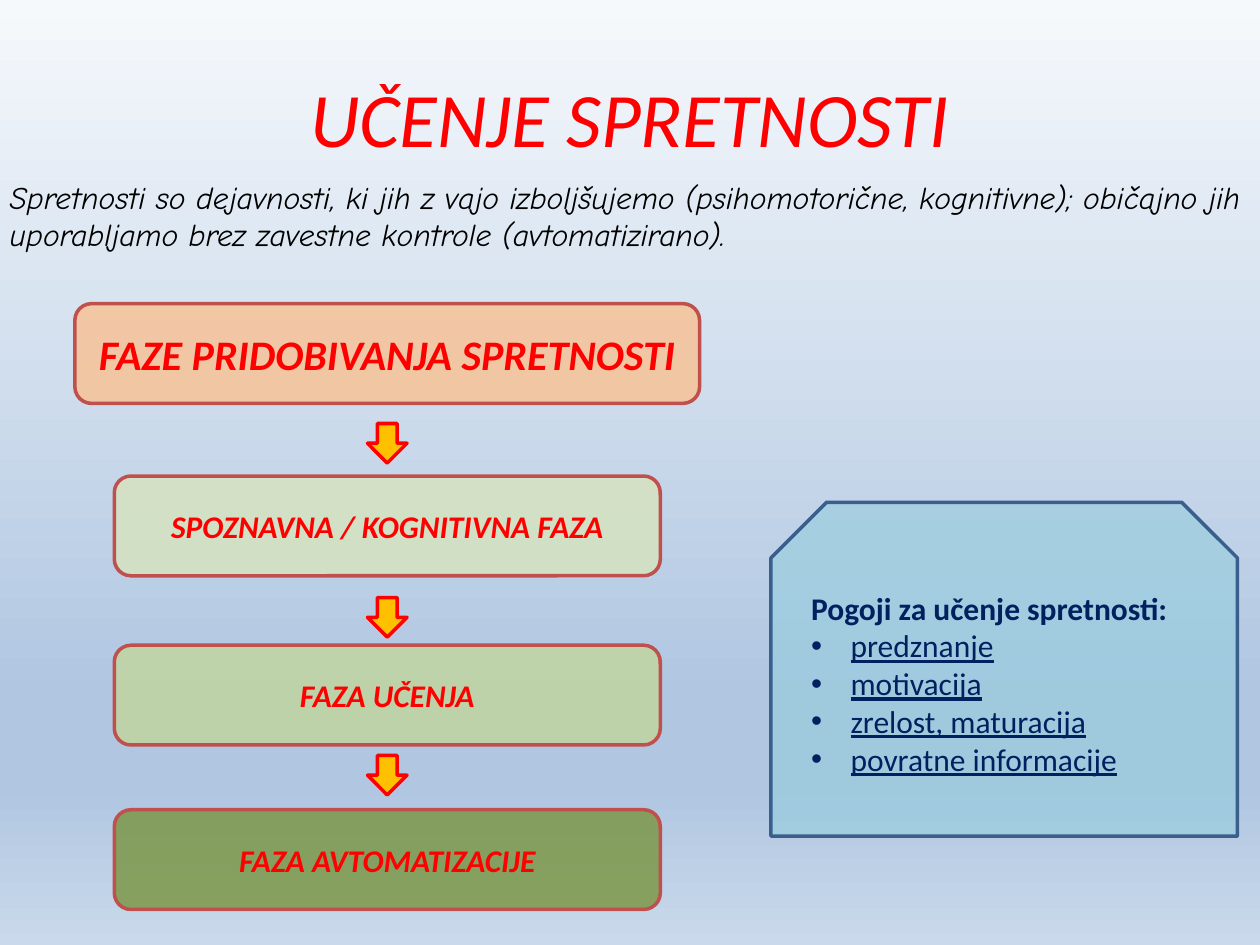
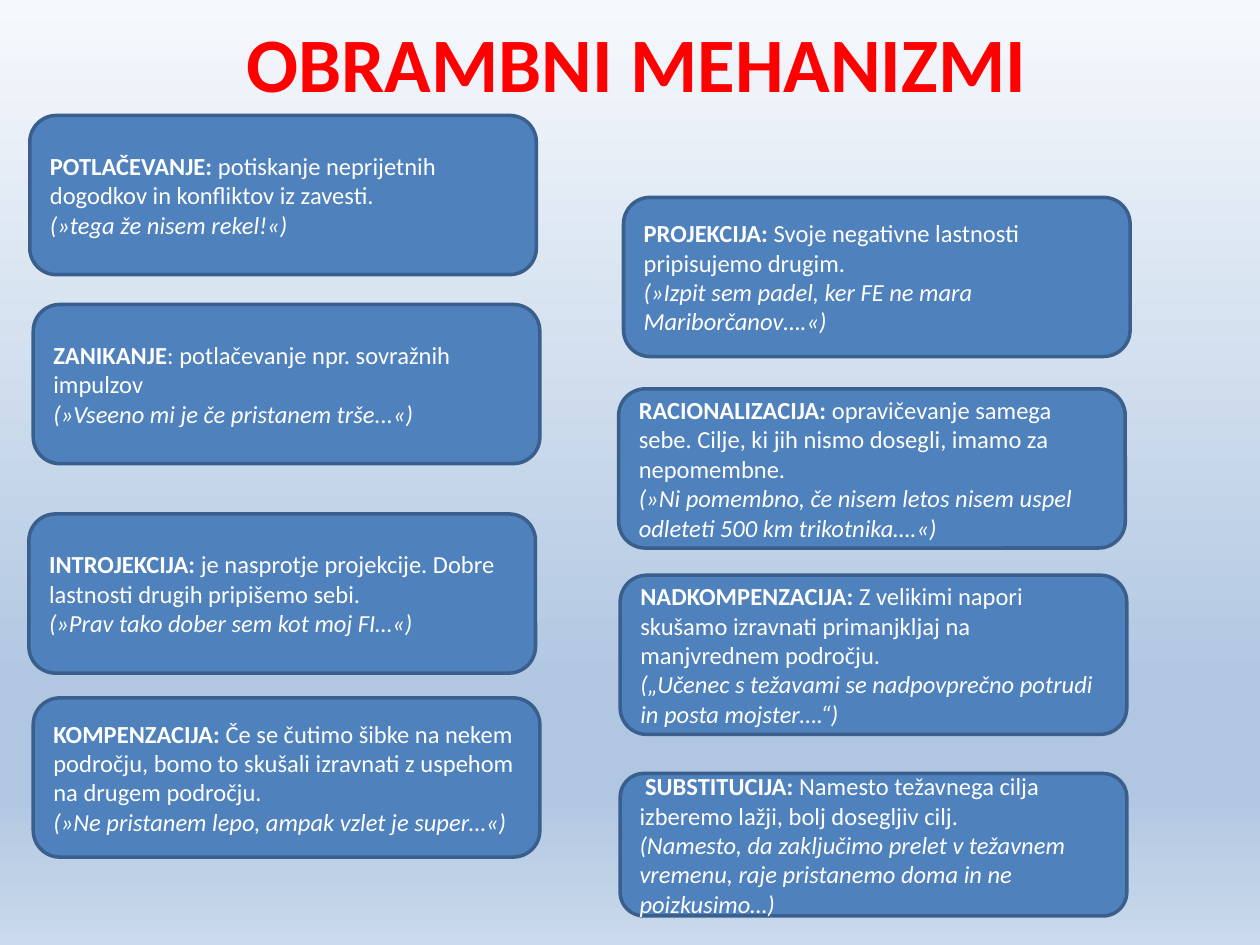
from lxml import etree
from pptx import Presentation
from pptx.dml.color import RGBColor
from pptx.enum import shapes, text
from pptx.oxml import ns
from pptx.util import Pt

COLORS = {
    "red": "FF0000", "black": "000000", "white": "FFFFFF", "navy": "002060",
    "sky": "93CDDD", "blue": "4F81BD", "blue edge": "3A5F8C",
    "brick": "C0504D", "peach": "FAC090", "amber": "FFC000",
    "pale green": "D7E4BD", "light green": "C3D69B", "dark green": "77933C",
}
BACKGROUND_STOPS = [(0, "F6F9FC"), (74, "B0C6E1"), (83, "B0C6E1"), (100, "CAD9EB")]
LEFT, CENTER = text.PP_ALIGN.LEFT, text.PP_ALIGN.CENTER


def add_box(slide, kind, box, fill, edge, opacity=100):
    """Add a filled, outlined shape; box is left, top, width, height in points."""
    shape = slide.shapes.add_shape(kind, *[Pt(length) for length in box])
    shape.shadow.inherit = False
    shape.fill.solid()
    shape.fill.fore_color.rgb = RGBColor.from_string(COLORS[fill])
    if opacity < 100:
        color = shape.element.spPr.find(ns.qn("a:solidFill"))[0]
        etree.SubElement(color, ns.qn("a:alpha"), val=str(opacity * 1000))
    shape.line.color.rgb = RGBColor.from_string(COLORS[edge])
    shape.line.width = Pt(2)
    shape.text_frame.word_wrap = True
    shape.text_frame.vertical_anchor = text.MSO_ANCHOR.MIDDLE
    return shape


def format_paragraph(paragraph, size, color, alignment=LEFT, name="Calibri", bold=None, italic=None):
    paragraph.alignment = alignment
    font = paragraph.font
    font.name, font.size, font.bold, font.italic = name, Pt(size), bold, italic
    font.color.rgb = RGBColor.from_string(COLORS[color])


presentation = Presentation()
presentation.slide_width, presentation.slide_height = Pt(720), Pt(540)

# Shared background
master = presentation.slide_master
background_fill = master.background.fill
background_fill.gradient()
background_fill.gradient_angle = 270
stop_list = master.element.xpath("./p:cSld/p:bg//a:gsLst")[0]
for old_stop in list(stop_list):
    stop_list.remove(old_stop)
for position, color in BACKGROUND_STOPS:
    stop = etree.SubElement(stop_list, ns.qn("a:gs"), pos=str(position * 1000))
    etree.SubElement(stop, ns.qn("a:srgbClr"), val=color)

# Both slides with their titles
slides = []
for wording, box, bold, italic in [
    ("UČENJE SPRETNOSTI", (36, 21.6, 648, 90), False, True),
    ("OBRAMBNI MEHANIZMI", (40, 0, 648, 71), True, False),
]:
    slide = presentation.slides.add_slide(presentation.slide_layouts[5])
    title = slide.shapes.title
    title.left, title.top, title.width, title.height = [Pt(length) for length in box]
    title.text_frame.text = wording
    title.text_frame.vertical_anchor = text.MSO_ANCHOR.MIDDLE
    format_paragraph(title.text_frame.paragraphs[0], 44, "red", CENTER, bold=bold, italic=italic)
    slides.append(slide)
skills_slide, defences_slide = slides

# Slide 1: definition, phases and conditions
definition = skills_slide.shapes.add_textbox(Pt(-1.5), Pt(98), Pt(720), Pt(73)).text_frame
definition.word_wrap = True
definition.text = (
    "Spretnosti so dejavnosti, ki jih z vajo izboljšujemo (psihomotorične, kognitivne); "
    "običajno jih uporabljamo brez zavestne kontrole (avtomatizirano)."
)
format_paragraph(definition.paragraphs[0], 18, "black", name="Comic Neue", italic=True)

PHASE_CENTER = 221.3
for wording, top, width, size, fill in [
    ("FAZE PRIDOBIVANJA SPRETNOSTI", 173.5, 357, 24, "peach"),
    ("SPOZNAVNA / KOGNITIVNA FAZA", 272, 312, 18, "pale green"),
    ("FAZA UČENJA", 368.7, 312, 18, "light green"),
    ("FAZA AVTOMATIZACIJE", 462.7, 312, 18, "dark green"),
]:
    box = (PHASE_CENTER - width / 2, top, width, 57)
    phase = add_box(skills_slide, shapes.MSO_SHAPE.ROUNDED_RECTANGLE, box, fill, "brick", 79)
    phase.text_frame.text = wording
    format_paragraph(phase.text_frame.paragraphs[0], size, "red", CENTER, bold=True, italic=True)

ARROW_SIZE = 22.6
for top in (242, 341.5, 431.7):
    box = (PHASE_CENTER - ARROW_SIZE / 2, top, ARROW_SIZE, ARROW_SIZE)
    add_box(skills_slide, shapes.MSO_SHAPE.DOWN_ARROW, box, "amber", "red")

conditions = add_box(skills_slide, shapes.MSO_SHAPE.SNIP_2_SAME_RECTANGLE,
                     (440.6, 287, 266.5, 190.8), "sky", "blue edge", 58).text_frame
conditions.text = "Pogoji za učenje spretnosti:"
format_paragraph(conditions.paragraphs[0], 18, "navy", bold=True)
for condition in ("predznanje", "motivacija", "zrelost, maturacija", "povratne informacije"):
    paragraph = conditions.add_paragraph()
    paragraph.text = condition
    format_paragraph(paragraph, 18, "navy")
    paragraph.font.underline = True
    properties = paragraph._p.get_or_add_pPr()
    properties.set("marL", str(Pt(22.5)))
    properties.set("indent", str(-Pt(22.5)))
    bullet_font = etree.Element(ns.qn("a:buFont"), typeface="Arial")
    bullet = etree.Element(ns.qn("a:buChar"), char="•")
    properties.insert(0, bullet_font)
    bullet_font.addnext(bullet)

# Slide 2: defence mechanisms
for left, top, height, term, meaning, example in [
    (17, 66, 91, "POTLAČEVANJE:", " potiskanje neprijetnih dogodkov in konfliktov iz zavesti.",
     "(»tega že nisem rekel!«)"),
    (19, 174, 91, "ZANIKANJE", ": potlačevanje npr. sovražnih impulzov",
     "(»Vseeno mi je če pristanem trše...«)"),
    (356.3, 112.8, 91, "PROJEKCIJA:", " Svoje negativne lastnosti pripisujemo drugim.",
     "(»Izpit sem padel, ker FE ne mara Mariborčanov….«)"),
    (16.5, 293.7, 91, "INTROJEKCIJA:",
     " je nasprotje projekcije. Dobre lastnosti drugih pripišemo sebi.",
     "(»Prav tako dober sem kot moj FI…«)"),
    (353.5, 222.2, 91, "RACIONALIZACIJA:",
     " opravičevanje samega sebe. Cilje, ki jih nismo dosegli, imamo za nepomembne.",
     "(»Ni pomembno, če nisem letos nisem uspel odleteti 500 km trikotnika….«)"),
    (19, 398.8, 91, "KOMPENZACIJA:",
     " Če se čutimo šibke na nekem področju, bomo to skušali izravnati z uspehom "
     "na drugem področju.",
     "(»Ne pristanem lepo, ampak vzlet je super…«)"),
    (354.4, 328.7, 91, "NADKOMPENZACIJA:",
     " Z velikimi napori skušamo izravnati primanjkljaj na manjvrednem področju.",
     "(„Učenec s težavami se nadpovprečno potrudi in posta mojster….“)"),
    (354.4, 442, 81.4, " SUBSTITUCIJA:",
     " Namesto težavnega cilja izberemo lažji, bolj dosegljiv cilj.",
     "(Namesto, da zaključimo prelet v težavnem vremenu, raje pristanemo doma in ne poizkusimo…)"),
]:
    frame = add_box(defences_slide, shapes.MSO_SHAPE.ROUNDED_RECTANGLE,
                    (left, top, 289.5, height), "blue", "blue edge").text_frame
    explanation = frame.paragraphs[0]
    format_paragraph(explanation, 14, "white")
    term_run = explanation.add_run()
    term_run.text = term
    term_run.font.bold = True
    explanation.add_run().text = meaning
    illustration = frame.add_paragraph()
    illustration.text = example
    format_paragraph(illustration, 14, "white", italic=True)

presentation.save("out.pptx")
